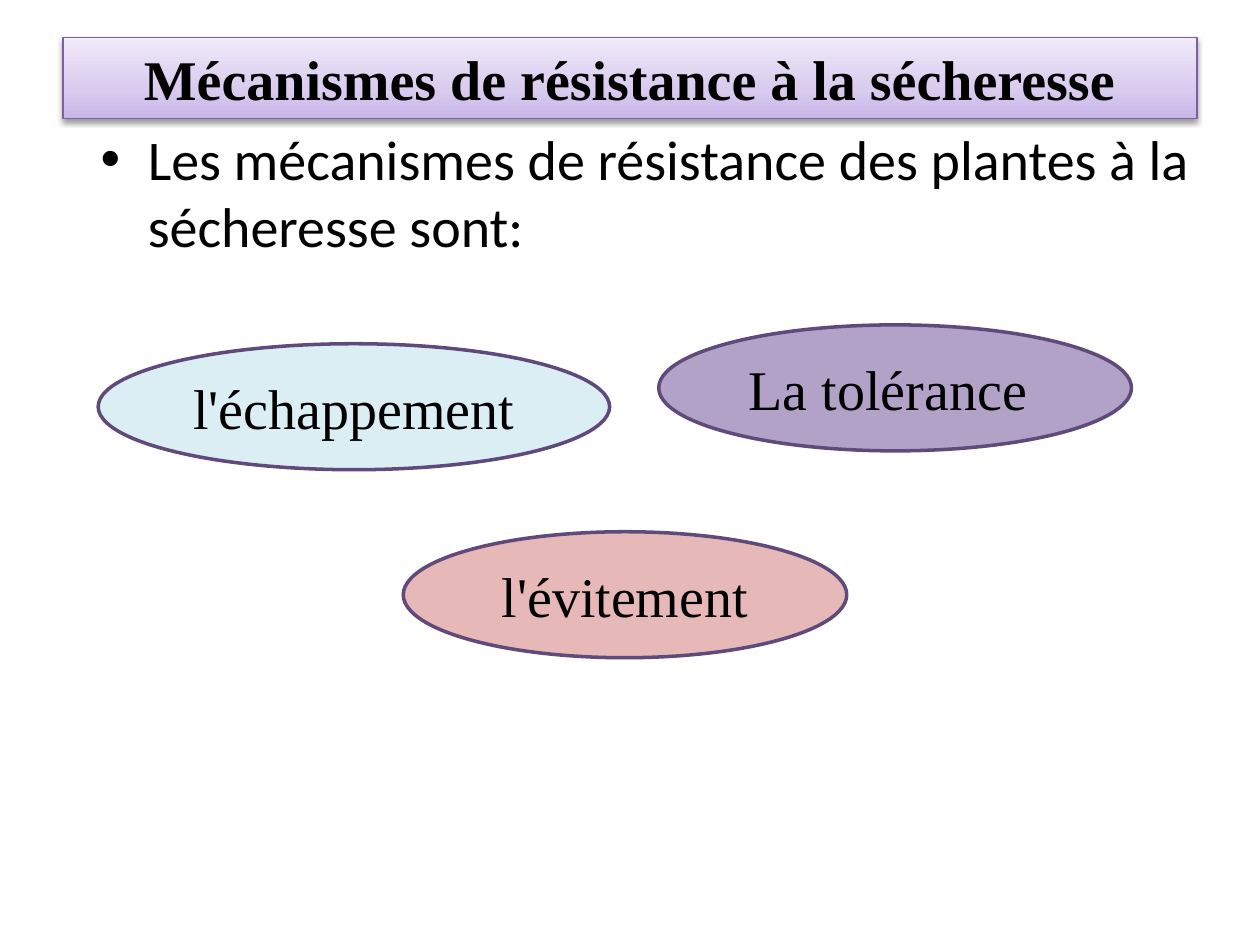
from lxml import etree
from pptx import Presentation
from pptx.dml.color import RGBColor
from pptx.enum.shapes import MSO_SHAPE as Preset
from pptx.enum.text import MSO_ANCHOR as Anchor, PP_ALIGN as Align
from pptx.oxml import parse_xml
from pptx.oxml.ns import nsdecls, qn
from pptx.util import Cm, Pt

COLORS = {
    "text": "000000",
    "title_line": "7D60A0",
    "oval_line": "604A7B",
    "violet": "B3A2C7",
    "rose": "E6B9B8",
    "aqua": "DBEEF4",
}
TITLE_GRADIENT = [(0, "C9B5E8"), (35, "D8CBEE"), (100, "F0EAF9")]
SERIF, SANS = "Times New Roman", "Calibri"

TITLE = "Mécanismes de résistance à la sécheresse"
INTRO = "Les mécanismes de résistance des plantes à la sécheresse sont:"
# text, fill, left, top, width (cm)
MECHANISMS = [
    ("La tolérance ", "violet", 13.28, 6.55, 9.53),
    ("l'évitement", "rose", 8.13, 10.72, 8.94),
    ("l'échappement", "aqua", 1.98, 6.93, 10.31),
]
OVAL_HEIGHT = 2.54


def color(name):
    return RGBColor.from_string(COLORS[name])


def write(box, text, face, bold=False):
    box.text_frame.word_wrap = True
    para = box.text_frame.paragraphs[0]
    para.text = text
    para.font.name = face
    para.font.size = Pt(32)
    para.font.bold = bold
    para.font.color.rgb = color("text")
    return para


def add_label(preset, place, text, line, width, bold=False):
    shape = page.shapes.add_shape(preset, *map(Cm, place))
    shape.shadow.inherit = False
    shape.line.color.rgb = color(line)
    shape.line.width = Pt(width)
    shape.text_frame.vertical_anchor = Anchor.MIDDLE
    write(shape, text, SERIF, bold).alignment = Align.CENTER
    return shape


deck = Presentation()
deck.slide_width, deck.slide_height = Cm(25.4), Cm(19.05)
page = deck.slides.add_slide(deck.slide_layouts[6])

# Title bar with gradient and soft shadow
bar = add_label(Preset.RECTANGLE, (1.27, 0.76, 22.86, 1.63), TITLE,
                "title_line", 0.75, bold=True)
bar.fill.gradient()
bar.fill.gradient_angle = 90
stops = bar.element.spPr.find(".//" + qn("a:gsLst"))
for stop in list(stops):
    stops.remove(stop)
for position, shade in TITLE_GRADIENT:
    stop = etree.SubElement(stops, qn("a:gs"), pos=str(position * 1000))
    etree.SubElement(stop, qn("a:srgbClr"), val=shade)
bar.element.spPr.find(qn("a:effectLst")).append(parse_xml(
    f'<a:outerShdw {nsdecls("a")} blurRad="{Pt(3.1)}" dist="{Pt(1.6)}" '
    'dir="5400000" rotWithShape="0"><a:srgbClr val="000000">'
    '<a:alpha val="38000"/></a:srgbClr></a:outerShdw>'))

# Bulleted introduction
intro = page.shapes.add_textbox(Cm(1.78), Cm(2.39), Cm(22.86), Cm(3.18))
props = intro.text_frame.paragraphs[0]._p.get_or_add_pPr()
props.set("marL", str(Cm(0.95)))
props.set("indent", str(-Cm(0.95)))
etree.SubElement(props, qn("a:buFont"), typeface="Arial")
etree.SubElement(props, qn("a:buChar"), char="•")
write(intro, INTRO, SANS)

# Mechanism ovals
for text, fill, left, top, width in MECHANISMS:
    oval = add_label(Preset.OVAL, (left, top, width, OVAL_HEIGHT), text,
                     "oval_line", 2)
    oval.fill.solid()
    oval.fill.fore_color.rgb = color(fill)

deck.save("out.pptx")
